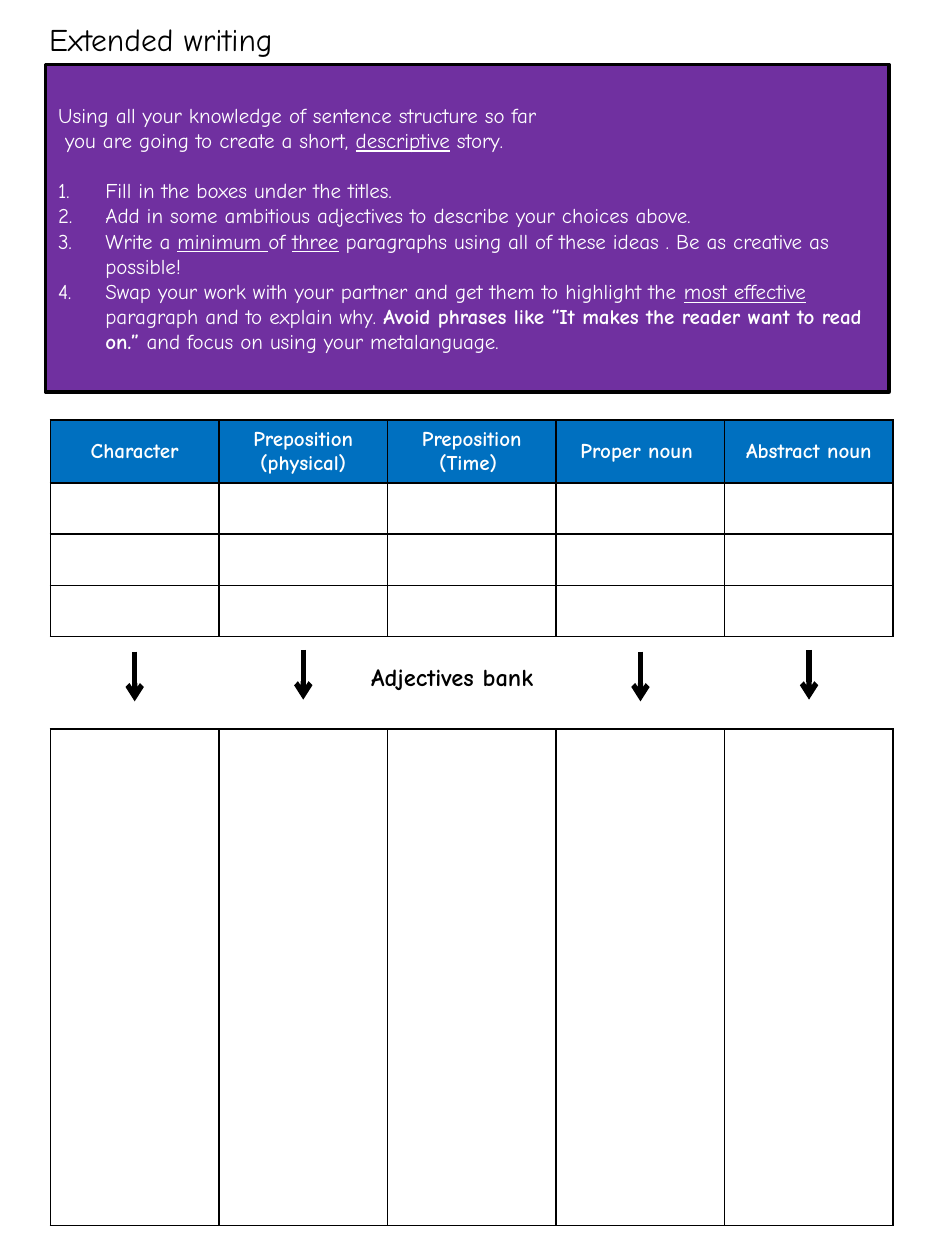
import pptx
import pptx.util
import pptx.dml.color
import pptx.enum.shapes
import pptx.enum.text
import pptx.oxml
import pptx.oxml.ns
from lxml import etree

Pt = pptx.util.Pt
RGBColor = pptx.dml.color.RGBColor
PP_ALIGN = pptx.enum.text.PP_ALIGN
MSO_ANCHOR = pptx.enum.text.MSO_ANCHOR
MSO_AUTO_SIZE = pptx.enum.text.MSO_AUTO_SIZE
qn = pptx.oxml.ns.qn

BLACK = RGBColor(0x00, 0x00, 0x00)
WHITE = RGBColor(0xFF, 0xFF, 0xFF)
PURPLE = RGBColor(0x70, 0x30, 0xA0)
BLUE = RGBColor(0x00, 0x70, 0xC0)
FONT = "Comic Neue"

TABLE_LEFT = 28.8
COL_WIDTH = 96.34
HEADINGS = ["Character", "Preposition (physical)", "Preposition (Time) ",
            "Proper noun ", "Abstract noun"]

# Each paragraph is a list of (text, format) runs.
UNDERLINE = {"underline": True}
INTRO = [
    [("Using all your knowledge of sentence structure so far", {})],
    [(" you are going to create a short, ", {}), ("descriptive", UNDERLINE),
     (" story.", {})],
]
STEPS = [
    [("Fill in the boxes under the titles.", {})],
    [("Add in some ambitious adjectives to describe your choices above.", {})],
    [("Write a ", {}), ("minimum ", UNDERLINE), ("of ", {}), ("three", UNDERLINE),
     (" paragraphs using all of these ideas . Be as creative as possible!", {})],
    [("Swap your work with your partner and get them to highlight the ", {}),
     ("most effective ", UNDERLINE), ("paragraph and to explain why. ", {}),
     ("Avoid phrases like “It makes the reader want to read on.” ", {"bold": True}),
     ("and focus on using your metalanguage.", {})],
]


def add_run(p, text, size=12, color=BLACK, bold=False, underline=False):
    r = p.add_run()
    r.text = text
    r.font.name = FONT
    r.font.size = Pt(size)
    r.font.color.rgb = color
    r.font.bold = bold
    r.font.underline = underline


def set_list_format(p, numbered):
    """Give a paragraph a hanging number, or remove its inherited bullet."""
    pPr = p._p.get_or_add_pPr()
    indent = Pt(27) if numbered else 0
    pPr.set("marL", str(indent))
    pPr.set("indent", str(-indent))
    if numbered:
        etree.SubElement(pPr, qn("a:buFont"), typeface=FONT)
        etree.SubElement(pPr, qn("a:buAutoNum"), type="arabicPeriod")
    else:
        etree.SubElement(pPr, qn("a:buNone"))


def set_borders(cell, color, width):
    tcPr = cell._tc.get_or_add_tcPr()
    for i, side in enumerate(("a:lnL", "a:lnR", "a:lnT", "a:lnB")):
        ln = etree.Element(qn(side), w=str(Pt(width)))
        fill = etree.SubElement(ln, qn("a:solidFill"))
        etree.SubElement(fill, qn("a:srgbClr"), val=str(color))
        tcPr.insert(i, ln)


class Worksheet:
    """The current slide and the style of its elements."""

    def __init__(self, slide, border=1, arrow=3, frame=2):
        self.slide = slide
        self.border = border
        self.arrow_width = arrow
        self.frame = frame

    def place(self, sp, left, top, width, height):
        sp.left, sp.top, sp.width, sp.height = map(Pt, (left, top, width, height))

    def title(self, text, *box):
        sp = self.slide.shapes.title
        self.place(sp, *box)
        tf = sp.text_frame
        tf.word_wrap = False
        tf.auto_size = MSO_AUTO_SIZE.NONE
        tf.vertical_anchor = MSO_ANCHOR.TOP
        p = tf.paragraphs[0]
        p.alignment = PP_ALIGN.LEFT
        add_run(p, text, size=18)

    def instructions(self, intro, steps, *box):
        sp = self.slide.placeholders[1]
        self.place(sp, *box)
        sp.fill.solid()
        sp.fill.fore_color.rgb = PURPLE
        sp.line.color.rgb = BLACK
        sp.line.width = Pt(self.frame)
        tf = sp.text_frame
        tf.word_wrap = True
        tf.auto_size = MSO_AUTO_SIZE.NONE
        tf.vertical_anchor = MSO_ANCHOR.MIDDLE
        for i, runs in enumerate(intro + steps):
            p = tf.add_paragraph() if i else tf.paragraphs[0]
            p.space_before = Pt(14.4 if i == len(intro) else 0)
            set_list_format(p, numbered=i >= len(intro))
            for text, fmt in runs:
                add_run(p, text, color=WHITE, **fmt)

    def label(self, text, *box):
        tf = self.slide.shapes.add_textbox(*map(Pt, box)).text_frame
        tf.word_wrap = False
        add_run(tf.paragraphs[0], text, size=14, bold=True)

    def table(self, top, row_heights, headings=()):
        """Draw a five-column grid whose first row may hold headings."""
        cols = len(HEADINGS)
        table = self.slide.shapes.add_table(
            len(row_heights), cols, Pt(TABLE_LEFT), Pt(top),
            Pt(COL_WIDTH * cols), Pt(sum(row_heights))).table
        table.first_row = table.horz_banding = False
        for col in table.columns:
            col.width = Pt(COL_WIDTH)
        for row, height in zip(table.rows, row_heights):
            row.height = Pt(height)
        for cell in table.iter_cells():
            cell.fill.solid()
            cell.fill.fore_color.rgb = WHITE
            set_borders(cell, BLACK, self.border)
        for i, text in enumerate(headings):
            cell = table.cell(0, i)
            cell.fill.fore_color.rgb = BLUE
            cell.vertical_anchor = MSO_ANCHOR.MIDDLE
            p = cell.text_frame.paragraphs[0]
            p.alignment = PP_ALIGN.CENTER
            add_run(p, text, color=WHITE, bold=True)

    def down_arrow(self, x, top, length):
        line = self.slide.shapes.add_connector(
            pptx.enum.shapes.MSO_CONNECTOR.STRAIGHT,
            Pt(x), Pt(top), Pt(x), Pt(top + length))
        line.line.color.rgb = BLACK
        line.line.width = Pt(self.arrow_width)
        etree.SubElement(line.line._get_or_add_ln(), qn("a:tailEnd"), type="arrow")
        etree.SubElement(line._element.spPr, qn("a:effectLst"))


def main():
    prs = pptx.Presentation()
    prs.slide_width, prs.slide_height = Pt(540), Pt(720)
    sheet = Worksheet(prs.slides.add_slide(prs.slide_layouts[1]))

    sheet.title("Extended writing", 20.9, 7.9, 160.6, 29)
    sheet.instructions(INTRO, STEPS, 26, 36.8, 482, 187.2)
    sheet.table(240, [36] + [29.25] * 3, HEADINGS)
    sheet.label("Adjectives bank", 205, 375, 130, 24.5)
    sheet.table(416.6, [283.7])
    for col, top in ((0, 372.4), (1, 371.4), (3, 372.4), (4, 371.4)):
        sheet.down_arrow(TABLE_LEFT + COL_WIDTH * (col + 0.5), top, 28.4)

    prs.save("out.pptx")


if __name__ == "__main__":
    main()
